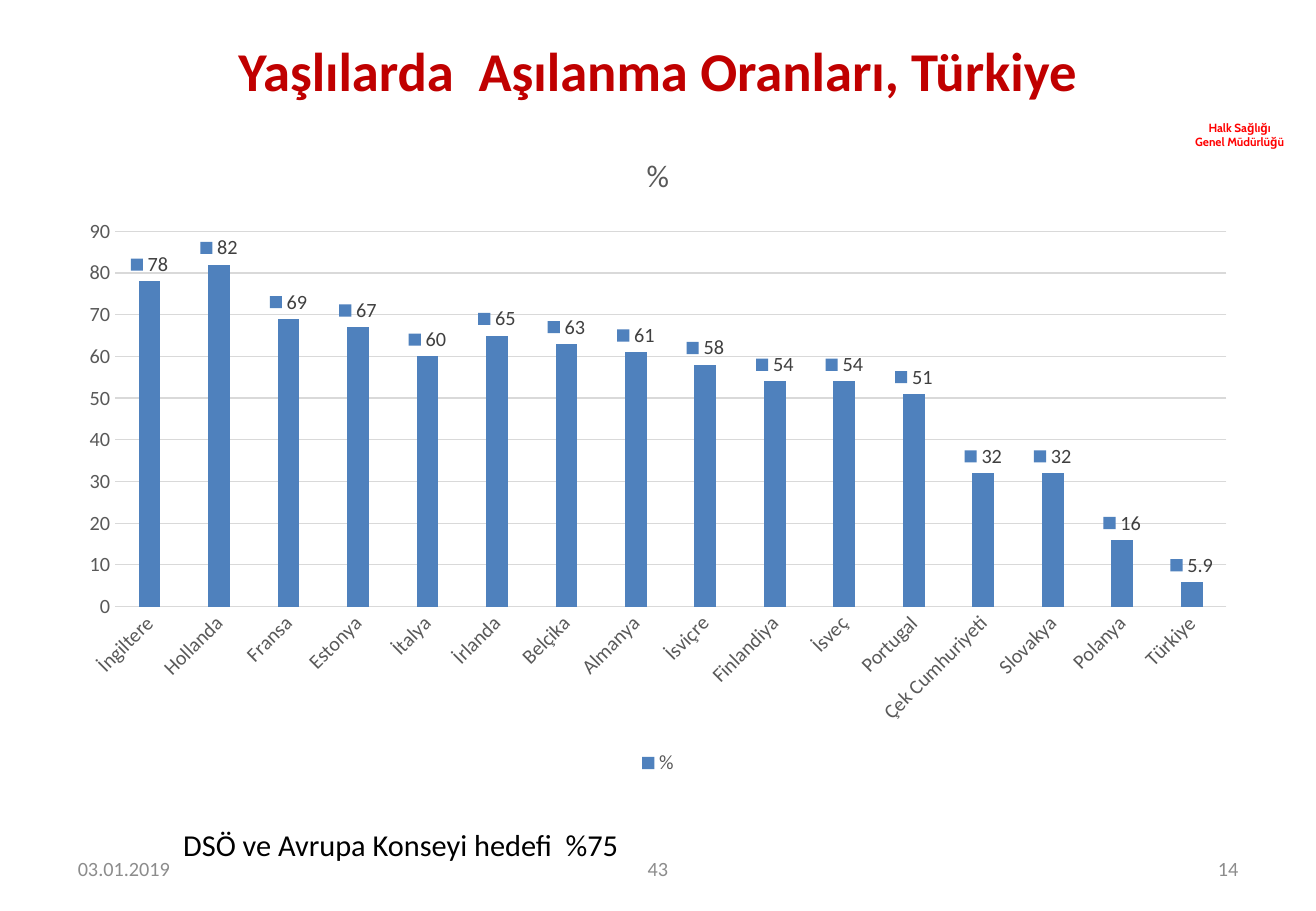
from pptx import Presentation
from pptx.chart.data import CategoryChartData
from pptx.dml.color import RGBColor
from pptx.enum.chart import XL_CHART_TYPE, XL_LABEL_POSITION, XL_LEGEND_POSITION, XL_TICK_MARK
from pptx.enum.text import MSO_ANCHOR, PP_ALIGN
from pptx.util import Pt

COLUMNS = XL_CHART_TYPE.COLUMN_CLUSTERED
OUTSIDE_END = XL_LABEL_POSITION.OUTSIDE_END
BOTTOM = XL_LEGEND_POSITION.BOTTOM
NO_TICK = XL_TICK_MARK.NONE
TOP, MIDDLE = MSO_ANCHOR.TOP, MSO_ANCHOR.MIDDLE
LEFT, CENTER, RIGHT = PP_ALIGN.LEFT, PP_ALIGN.CENTER, PP_ALIGN.RIGHT

PAGE_WIDTH, PAGE_HEIGHT = 780, 540
MARGIN = 39
CONTENT_WIDTH = PAGE_WIDTH - 2 * MARGIN

RATES = {
    "İngiltere": 78, "Hollanda": 82, "Fransa": 69, "Estonya": 67,
    "İtalya": 60, "İrlanda": 65, "Belçika": 63, "Almanya": 61,
    "İsviçre": 58, "Finlandiya": 54, "İsveç": 54, "Portugal": 51,
    "Çek Cumhuriyeti": 32, "Slovakya": 32, "Polanya": 16, "Türkiye": 5.9,
}


def color(value):
    """Turn a hex string into a colour."""
    return RGBColor.from_string(value)


def apply_values(target, values):
    """Set each named attribute of the target."""
    for name, value in values.items():
        setattr(target, name, value)


def style_font(font, size, shade, name="Calibri", bold=False):
    """Give a font its face, size, weight and colour."""
    apply_values(font, {"name": name, "size": Pt(size), "bold": bold})
    font.color.rgb = color(shade)


def add_text(page, area, lines, font_values, align=LEFT, anchor=TOP, inset=(7.2, 3.6)):
    """Add a text box with one paragraph for each line."""
    box = page.shapes.add_textbox(*(Pt(length) for length in area))
    side, edge = (Pt(length) for length in inset)
    frame = box.text_frame
    apply_values(frame, {
        "word_wrap": True, "vertical_anchor": anchor,
        "margin_left": side, "margin_right": side,
        "margin_top": edge, "margin_bottom": edge,
    })
    for index, line in enumerate(lines):
        para = frame.add_paragraph() if index else frame.paragraphs[0]
        para.alignment = align
        span = para.add_run()
        span.text = line
        style_font(span.font, **font_values)
    return box


def add_header(page, left, top, width):
    """Add the institution label and the slide title."""
    label = add_text(page, (left + 655.1, top + 49.7, 81.4, 17.3),
                     ["Halk Sağlığı", "Genel Müdürlüğü"],
                     {"size": 7, "shade": "FF0000", "name": "Cabin", "bold": True},
                     CENTER, inset=(0, 0))
    label.fill.solid()
    label.fill.fore_color.rgb = color("FFFFFF")
    add_text(page, (left, top, width, 39.6), ["Yaşlılarda  Aşılanma Oranları, Türkiye"],
             {"size": 32.4, "shade": "C00000", "bold": True}, CENTER, MIDDLE)


def style_line(line):
    """Draw a thin light grey line."""
    line.width = Pt(0.75)
    line.color.rgb = color("D9D9D9")


def add_rate_chart(page, left, top, width, height):
    """Add the column chart of vaccination rates by country."""
    rates = CategoryChartData()
    rates.categories = list(RATES)
    rates.add_series("%", list(RATES.values()))
    chart = page.shapes.add_chart(COLUMNS, Pt(left), Pt(top), Pt(width), Pt(height), rates).chart
    style_font(chart.font, 10, "000000")

    chart.has_title = True
    title = chart.chart_title.text_frame
    title.text = "%"
    style_font(title.paragraphs[0].runs[0].font, 18.6, "595959")

    chart.has_legend = True
    apply_values(chart.legend, {"position": BOTTOM, "include_in_layout": False})
    style_font(chart.legend.font, 12, "595959")

    countries, scale = chart.category_axis, chart.value_axis
    for axis in (countries, scale):
        apply_values(axis, {"major_tick_mark": NO_TICK, "minor_tick_mark": NO_TICK})
        style_font(axis.tick_labels.font, 12, "595959")
    style_line(countries.format.line)
    apply_values(scale, {"minimum_scale": 0, "maximum_scale": 90, "major_unit": 10})
    scale.format.line.fill.background()
    style_line(scale.major_gridlines.format.line)

    plot = chart.plots[0]
    apply_values(plot, {"gap_width": 219, "overlap": -27,
                        "vary_by_categories": False, "has_data_labels": True})
    apply_values(plot.data_labels, {"show_value": True, "show_legend_key": True,
                                    "position": OUTSIDE_END})
    style_font(plot.data_labels.font, 12, "404040")
    columns = plot.series[0].format.fill
    columns.solid()
    columns.fore_color.rgb = color("4F81BD")


def add_footer(page, left, top, width):
    """Add the date, the two numbers and the target note."""
    side, middle = 182, 247
    places = (
        ("03.01.2019", left, side, LEFT),
        ("43", left + (width - middle) / 2, middle, CENTER),
        ("14", left + width - side, side, RIGHT),
    )
    for text, start, span_width, align in places:
        add_text(page, (start, top, span_width, 28.8), [text],
                 {"size": 12, "shade": "8C8C8C"}, align, MIDDLE)
    add_text(page, (left + 62.5, top - 14.4, 412, 28.8),
             ["DSÖ ve Avrupa Konseyi hedefi  %75"], {"size": 18, "shade": "000000"})


def main():
    """Build the slide and save the deck."""
    deck = Presentation()
    apply_values(deck, {"slide_width": Pt(PAGE_WIDTH), "slide_height": Pt(PAGE_HEIGHT)})
    page = deck.slides.add_slide(deck.slide_layouts[6])
    add_header(page, MARGIN, 21.6, CONTENT_WIDTH)
    add_rate_chart(page, MARGIN, 76.3, CONTENT_WIDTH, 386)
    add_footer(page, MARGIN, 500.4, CONTENT_WIDTH)
    deck.save("out.pptx")


if __name__ == "__main__":
    main()
